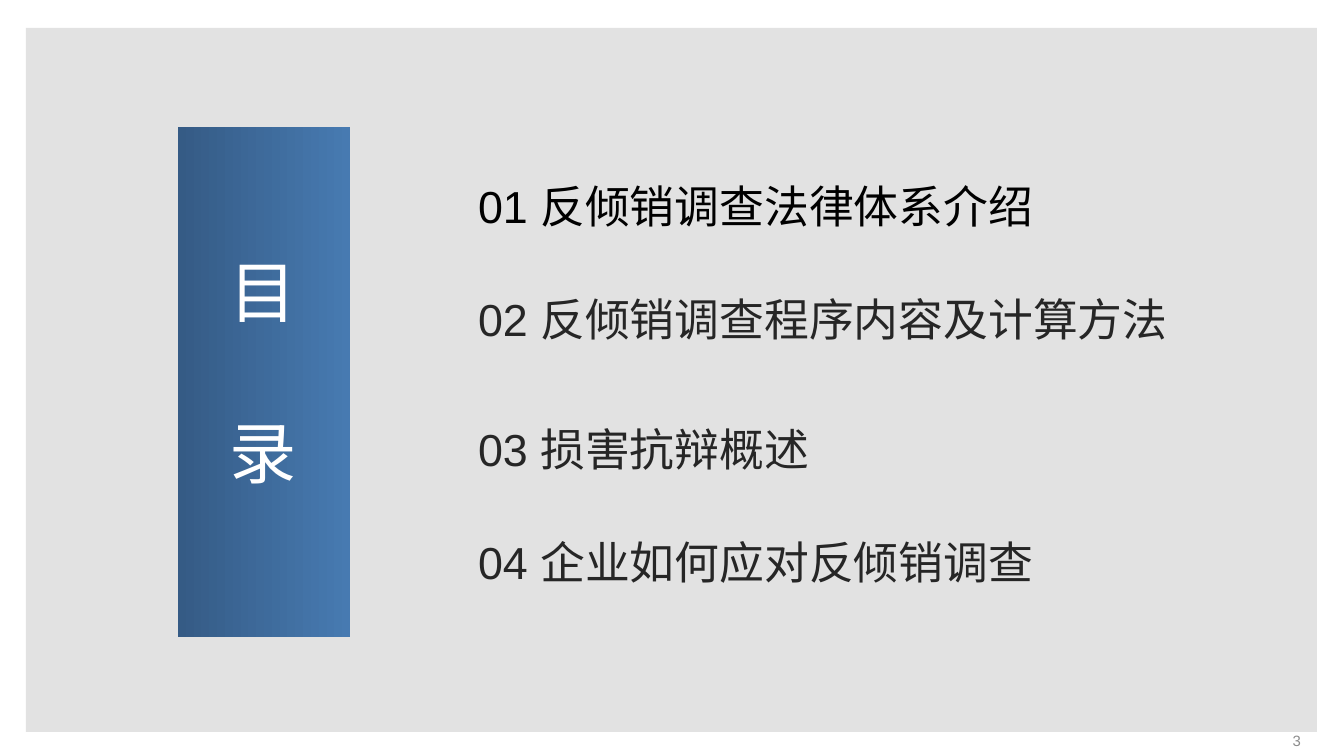
from lxml import etree
from pptx import Presentation
from pptx import util as u
from pptx.dml.color import RGBColor
from pptx.enum import shapes, text
from pptx.oxml.ns import qn

SCALE = 914400 / 134.4
SLIDE_SIZE = (1344, 756)
PANEL = (26, 28, 1291, 704)
BANNER = (178, 127, 172, 510)
HEADING = (202, 243, 122, 258)
PAGE_NUMBER = (990, 729, 321, 23)
AGENDA_LEFT, AGENDA_TOP, AGENDA_HEIGHT, AGENDA_PITCH = 468, 172, 73, 113.33

AGENDA = [
    ("01 反倾销调查法律体系介绍", "000000", 0.9, 761),
    ("02 反倾销调查程序内容及计算方法", "262626", 0.9, 731),
    ("03 损害抗辩概述", "262626", 1.5, 731),
    ("04 企业如何应对反倾销调查", "262626", 1.5, 731),
]
HEADING_CHARACTERS = ["目", "录"]


def px(length):
    return u.Emu(round(length * SCALE))


def color(value):
    return RGBColor.from_string(value)


def place(shape, box):
    shape.left, shape.top, shape.width, shape.height = map(px, box)


def add_rectangle(slide, box):
    shape = slide.shapes.add_shape(shapes.MSO_SHAPE.RECTANGLE, *map(px, box))
    shape.shadow.inherit = False
    shape.line.fill.background()
    return shape


def format_frame(shape, margins=(10, 5), anchor=text.MSO_ANCHOR.MIDDLE):
    frame = shape.text_frame
    frame.word_wrap = True
    frame.auto_size = text.MSO_AUTO_SIZE.NONE
    frame.vertical_anchor = anchor
    frame.margin_left = frame.margin_right = px(margins[0])
    frame.margin_top = frame.margin_bottom = px(margins[1])
    return frame


def add_run(paragraph, words, size, fill):
    run = paragraph.add_run()
    run.text = words
    run.font.name = "Arial"
    run.font.size = u.Pt(size)
    run.font.color.rgb = color(fill)


presentation = Presentation()
presentation.slide_width, presentation.slide_height = map(px, SLIDE_SIZE)
slide = presentation.slides.add_slide(presentation.slide_layouts[5])
title = slide.shapes.title

panel = add_rectangle(slide, PANEL)
panel.fill.solid()
panel.fill.fore_color.rgb = color("D9D9D9")
panel_color = panel.fill._xPr.find(qn("a:solidFill"))[0]
etree.SubElement(panel_color, qn("a:alpha")).set("val", "76000")
title._element.addprevious(panel._element)

banner = add_rectangle(slide, BANNER)
banner.fill.gradient()
banner.fill.gradient_angle = 0
for stop, position, value in zip(banner.fill.gradient_stops, (0, 1), ("355B85", "477AB1")):
    stop.position = position
    stop.color.rgb = color(value)

for index, (topic, fill, spacing, width) in enumerate(AGENDA):
    box = (AGENDA_LEFT, AGENDA_TOP + index * AGENDA_PITCH, width, AGENDA_HEIGHT)
    entry = title if index == 0 else slide.shapes.add_textbox(0, 0, 0, 0)
    place(entry, box)
    paragraph = format_frame(entry).paragraphs[0]
    paragraph.alignment = text.PP_ALIGN.LEFT
    paragraph.line_spacing = spacing
    add_run(paragraph, topic, 24, fill)

heading = slide.shapes.add_textbox(*map(px, HEADING))
frame = format_frame(heading, (13, 7), text.MSO_ANCHOR.TOP)
for index, character in enumerate(HEADING_CHARACTERS):
    paragraph = frame.add_paragraph() if index else frame.paragraphs[0]
    paragraph.alignment = text.PP_ALIGN.CENTER
    paragraph.space_before = u.Pt(43 if index else 0)
    add_run(paragraph, character, 36, "FFFFFF")

page_number = slide.shapes.add_textbox(*map(px, PAGE_NUMBER))
paragraph = format_frame(page_number).paragraphs[0]
paragraph.alignment = text.PP_ALIGN.RIGHT
add_run(paragraph, "3", 8, "8C8C8C")

presentation.save("out.pptx")
